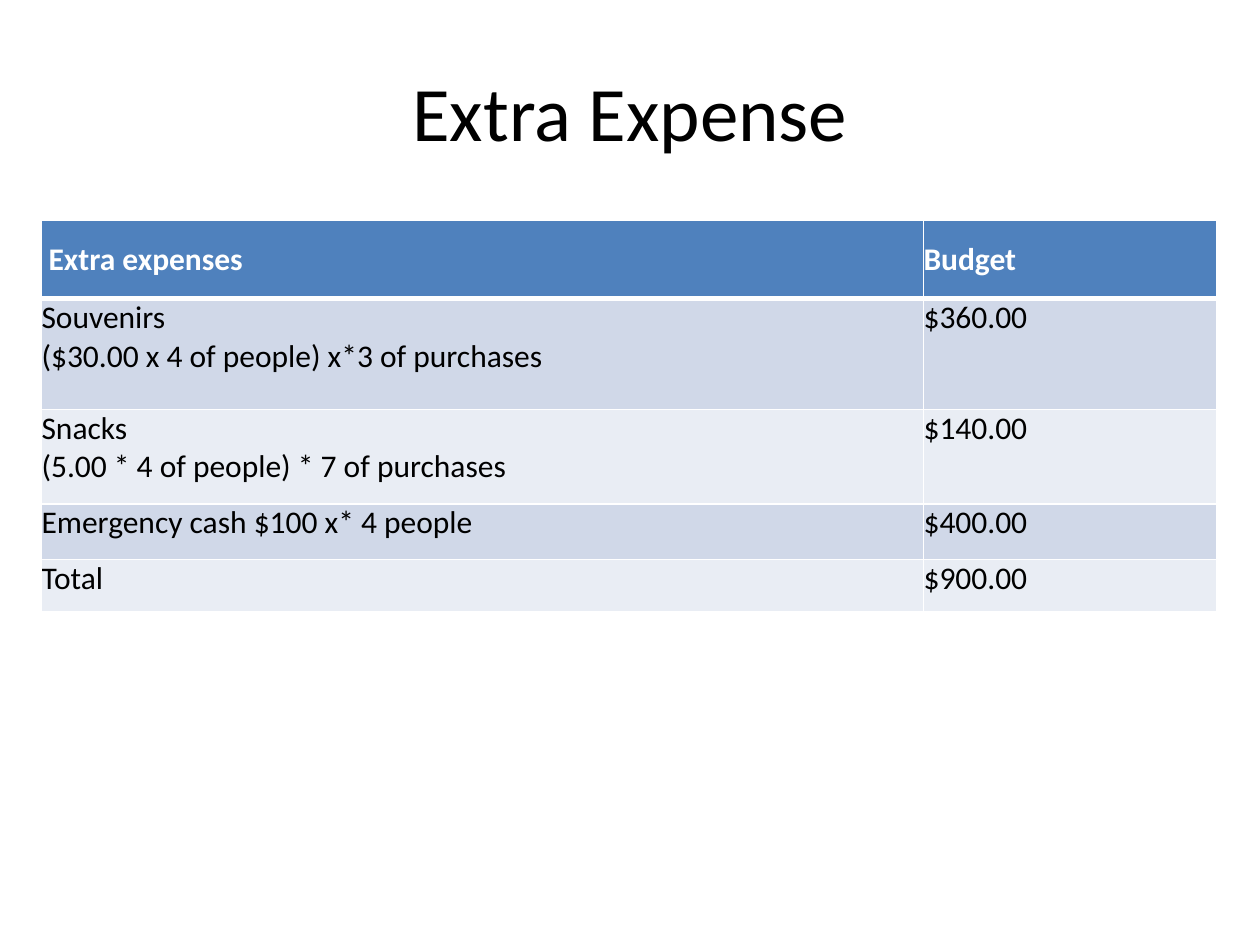
from dataclasses import dataclass

from lxml.etree import SubElement
from pptx import Presentation
from pptx.dml.color import RGBColor as RGB
from pptx.enum.text import MSO_ANCHOR as Anchor, PP_ALIGN as Align
from pptx.oxml.ns import qn
from pptx.util import Inches, Pt


@dataclass(frozen=True)
class Theme:
    """Colours, font and type sizes of the slide."""
    font: str = "Calibri"
    title_size: int = 44
    body_size: int = 18
    ink: str = "000000"
    white: str = "FFFFFF"
    header: str = "4F81BD"
    bands: tuple = ("D0D8E8", "E9EDF4")


THEME = Theme()
COLS = (7, 2.33)
ROW_HEIGHTS = (0.62, 0.88, 0.75, 0.44, 0.42)
ROWS = (
    (" Extra expenses", "Budget"),
    ("Souvenirs\n($30.00 x 4 of people) x*3 of purchases", "$360.00"),
    ("Snacks\n(5.00 * 4 of people) * 7 of purchases", "$140.00"),
    ("Emergency cash $100 x* 4 people", "$400.00"),
    ("Total", "$900.00"),
)


def apply(obj, values):
    """Set each attribute named in values on obj."""
    for name, value in values.items():
        setattr(obj, name, value)


def write(tf, text, size, color, align=Align.LEFT, bold=False):
    """Fill a text frame, one paragraph for each line of text."""
    tf.text = text
    for p in tf.paragraphs:
        p.alignment = align
        for r in p.runs:
            apply(r.font, {"name": THEME.font, "size": Pt(size), "bold": bold})
            r.font.color.rgb = RGB.from_string(color)


def add_title(s, text):
    """Add the centred slide title."""
    tf = s.shapes.add_textbox(Inches(0.5), Inches(0.25), Inches(9), Inches(1.25)).text_frame
    apply(tf, {"word_wrap": True, "vertical_anchor": Anchor.MIDDLE})
    write(tf, text, THEME.title_size, THEME.ink, Align.CENTER)


def add_borders(cell, bottom):
    """Draw white cell borders, with the given bottom width in points."""
    tc_pr = cell._tc.get_or_add_tcPr()
    widths = {"lnL": 1, "lnR": 1, "lnT": 1, "lnB": bottom}
    for i, (tag, width) in enumerate(widths.items()):
        ln = SubElement(tc_pr, qn(f"a:{tag}"), w=str(Pt(width)))
        tc_pr.insert(i, ln)
        fill = SubElement(ln, qn("a:solidFill"))
        SubElement(fill, qn("a:srgbClr"), val=THEME.white)


def format_cell(cell, text, row):
    """Write and style one cell according to its row."""
    header = row == 0
    apply(cell, {
        "margin_left": 0, "margin_right": 0, "margin_top": 0, "margin_bottom": 0,
        "vertical_anchor": Anchor.MIDDLE if header else Anchor.TOP,
    })
    color = THEME.white if header else THEME.ink
    write(cell.text_frame, text, THEME.body_size, color, bold=header)
    cell.fill.solid()
    fill = THEME.header if header else THEME.bands[(row - 1) % 2]
    cell.fill.fore_color.rgb = RGB.from_string(fill)
    add_borders(cell, 3 if row < 2 and header else 1)


def add_budget_table(s):
    """Add the expense table."""
    table = s.shapes.add_table(
        len(ROWS), len(COLS), Inches(0.33), Inches(1.75),
        Inches(sum(COLS)), Inches(sum(ROW_HEIGHTS))).table
    for col, width in zip(table.columns, COLS):
        col.width = Inches(width)
    for i, (height, texts) in enumerate(zip(ROW_HEIGHTS, ROWS)):
        table.rows[i].height = Inches(height)
        for j, text in enumerate(texts):
            format_cell(table.cell(i, j), text, i)


def main():
    """Build and save the slide."""
    prs = Presentation()
    apply(prs, {"slide_width": Inches(10), "slide_height": Inches(7.5)})
    s = prs.slides.add_slide(prs.slide_layouts[6])
    add_title(s, "Extra Expense")
    add_budget_table(s)
    prs.save("out.pptx")


if __name__ == "__main__":
    main()
